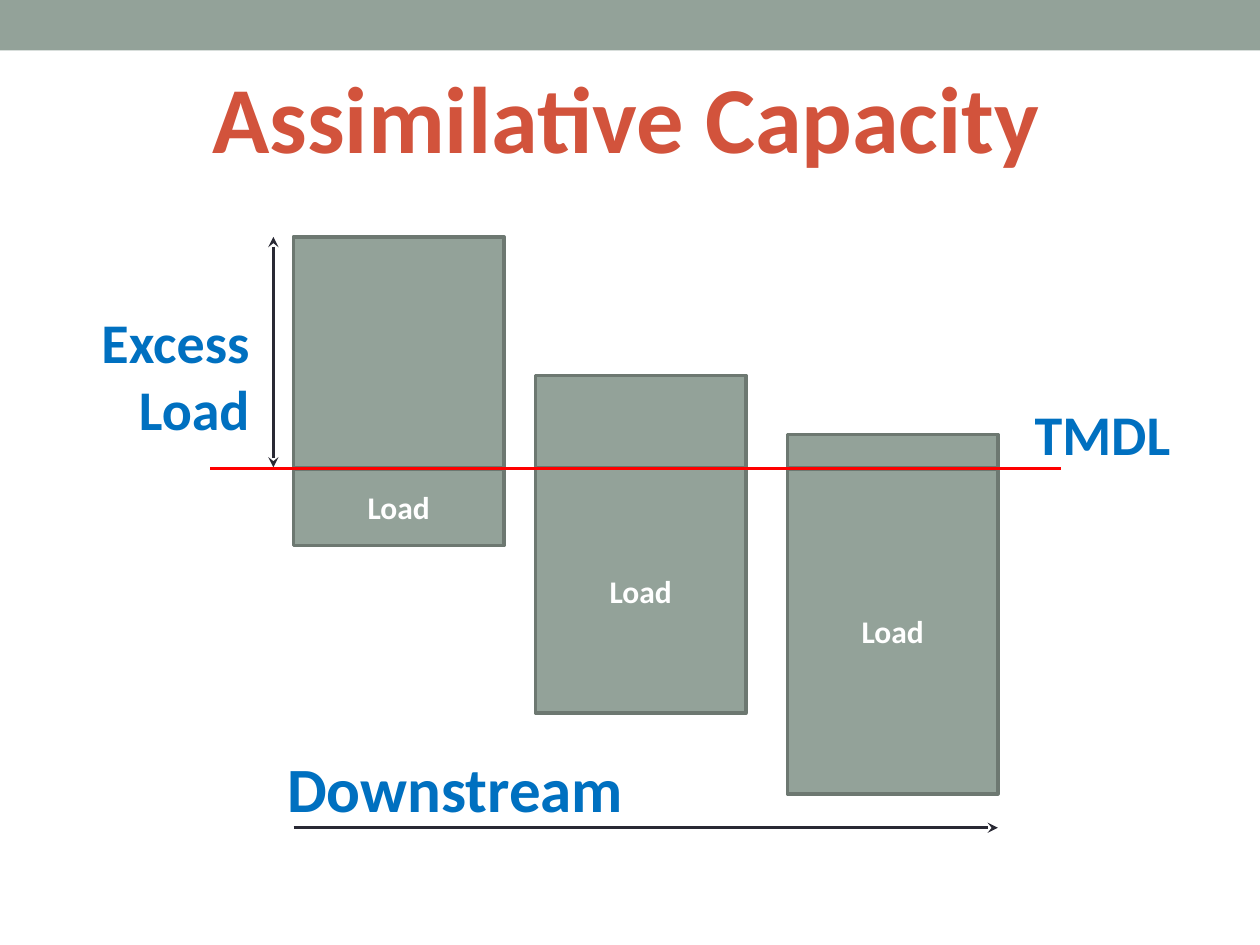
"""Build the Assimilative Capacity slide: loads against the TMDL line, going downstream."""
from pptx import Presentation
from pptx.dml.color import RGBColor as RGB
from pptx.enum.shapes import MSO_CONNECTOR as CONN, MSO_SHAPE as SHAPE
from pptx.enum.text import MSO_ANCHOR as ANCHOR, PP_ALIGN as ALIGN
from pptx.oxml.ns import qn
from pptx.util import Inches, Pt
from lxml.etree import SubElement

SAGE = RGB(0x93, 0xA2, 0x99)
EDGE = RGB(0x6D, 0x78, 0x71)
RUST = RGB(0xD2, 0x53, 0x3C)
BLUE = RGB(0x00, 0x70, 0xC0)
DARK = RGB(0x29, 0x29, 0x34)
RED = RGB(0xFF, 0x00, 0x00)
WHITE = RGB(0xFF, 0xFF, 0xFF)


def write(shape, text, size, color, align=ALIGN.CENTER, anchor=ANCHOR.TOP):
    frame = shape.text_frame
    frame.word_wrap = True
    frame.vertical_anchor = anchor
    par = frame.paragraphs[0]
    par.alignment = align
    run = par.add_run()
    run.text = text
    font = run.font
    font.name, font.size, font.bold = "Calibri", Pt(size), True
    font.color.rgb = color


def block(left, top, width, height, edge=None):
    shape = slide.shapes.add_shape(
        SHAPE.RECTANGLE, Inches(left), Inches(top), Inches(width), Inches(height))
    shape.shadow.inherit = False
    shape.fill.solid()
    shape.fill.fore_color.rgb = SAGE
    if edge is None:
        shape.line.fill.background()
    else:
        shape.line.color.rgb = edge
        shape.line.width = Pt(2.08)
    return shape


deck = Presentation()
deck.slide_width, deck.slide_height = Inches(10), Inches(7.5)
slide = deck.slides.add_slide(deck.slide_layouts[5])

block(0, 0, 10, 0.4)

title = slide.shapes.title
title.left, title.top = Inches(0.72), Inches(0.42)
title.width, title.height = Inches(8.5), Inches(1.01)
write(title, "Assimilative Capacity", 54, RUST)

limit = 3.72
wide = 1.67
for left, above, below in [(2.33, 1.83, 0.61), (4.25, 0.73, 1.94), (6.25, 0.26, 2.58)]:
    load = block(left, limit, wide, below, EDGE)
    write(load, "Load", 18, WHITE, anchor=ANCHOR.MIDDLE)
    block(left, limit - 0.01 - above, wide, above, EDGE)

for x1, y1, x2, y2, color, width, ends in [
    (2.33, 6.57, 7.92, 6.57, DARK, 1.5, ["tailEnd"]),
    (2.17, 1.88, 2.17, 3.71, DARK, 1.5, ["headEnd", "tailEnd"]),
    (1.67, limit, 8.42, limit, RED, 2, []),
]:
    line = slide.shapes.add_connector(
        CONN.STRAIGHT, Inches(x1), Inches(y1), Inches(x2), Inches(y2))
    line.line.color.rgb = color
    line.line.width = Pt(width)
    props = line._element.spPr
    for end in ends:
        SubElement(props.find(qn("a:ln")), qn("a:" + end), type="stealth")
    SubElement(props, qn("a:effectLst"))

for text, left, top, width, height, size, align in [
    ("Downstream", 2.18, 5.9, 4.92, 0.71, 36, ALIGN.LEFT),
    ("TMDL", 8, 3.12, 1.5, 0.64, 32, ALIGN.CENTER),
    ("Excess Load", 0.5, 2.39, 1.58, 1.18, 32, ALIGN.RIGHT),
]:
    label = slide.shapes.add_textbox(
        Inches(left), Inches(top), Inches(width), Inches(height))
    write(label, text, size, BLUE, align)

deck.save("out.pptx")
